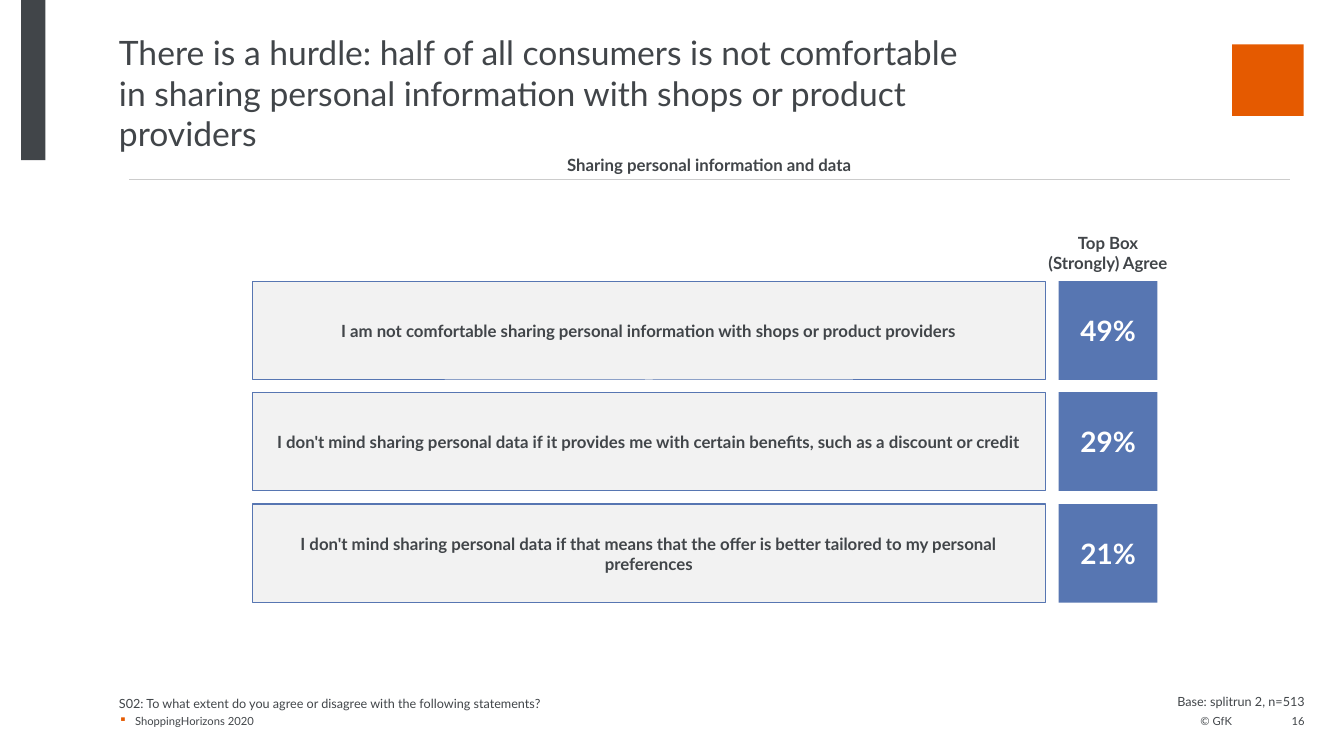
from lxml import etree
from pptx import Presentation
from pptx.dml.color import RGBColor
from pptx.enum.shapes import MSO_CONNECTOR as CONNECTOR, MSO_SHAPE as SHAPE
from pptx.enum.text import MSO_ANCHOR as ANCHOR, MSO_AUTO_SIZE as AUTO_SIZE, PP_ALIGN as ALIGN
from pptx.oxml.ns import qn
from pptx.util import Pt

PX = 9144  # 100 px to the inch
FONT = "Lato"
DARK, BLUE, ORANGE = "414549", "5776B2", "E55A00"
PALE, RULE, WHITE = "F2F2F2", "CCCCCC", "FFFFFF"

STATEMENTS = [
    ("I am not comfortable sharing personal information with shops or product providers", "49%"),
    ("I don't mind sharing personal data if it provides me with certain benefits, "
     "such as a discount or credit", "29%"),
    ("I don't mind sharing personal data if that means that the offer is better "
     "tailored to my personal preferences", "21%"),
]
ROWS_TOP, ROW_HEIGHT, ROWS_SPAN = 279, 98, 221


def px(*lengths):
    return [length * PX for length in lengths]


def rgb(color):
    return RGBColor.from_string(color)


def write(frame, text, size, color=DARK, bold=False, align=ALIGN.LEFT, anchor=ANCHOR.BOTTOM):
    frame.text = text
    frame.word_wrap = True
    frame.auto_size = AUTO_SIZE.NONE
    frame.vertical_anchor = anchor
    paragraph = frame.paragraphs[0]
    paragraph.alignment = align
    for run in paragraph.runs:
        run.font.name = FONT
        run.font.size = Pt(size)
        run.font.bold = bold
        run.font.color.rgb = rgb(color)


def remove_margins(frame):
    frame.margin_left = frame.margin_top = frame.margin_right = frame.margin_bottom = 0


def add_label(slide, box, text, size, **style):
    frame = slide.shapes.add_textbox(*px(*box)).text_frame
    remove_margins(frame)
    write(frame, text, size, **style)
    return frame


def add_box(slide, box, fill, line=None):
    rect = slide.shapes.add_shape(SHAPE.RECTANGLE, *px(*box))
    rect.shadow.inherit = False
    rect.fill.solid()
    rect.fill.fore_color.rgb = rgb(fill)
    if line:
        rect.line.color.rgb = rgb(line)
        rect.line.width = Pt(0.75)
    else:
        rect.line.fill.background()
    return rect


def add_bullet(paragraph, symbol, color, indent):
    properties = paragraph._p.get_or_add_pPr()
    properties.set("marL", str(indent * PX))
    properties.set("indent", str(-indent * PX))
    bullet_color = etree.SubElement(properties, qn("a:buClr"))
    etree.SubElement(bullet_color, qn("a:srgbClr"), val=color)
    etree.SubElement(properties, qn("a:buChar"), char=symbol)


def add_rule(slide, left, right, y):
    rule = slide.shapes.add_connector(CONNECTOR.STRAIGHT, *px(left, y, right, y))
    rule.line.color.rgb = rgb(RULE)
    rule.line.width = Pt(0.5)
    etree.SubElement(rule._element.spPr, qn("a:effectLst"))


def set_title(slide, box, text):
    title = slide.shapes.title
    title.left, title.top, title.width, title.height = px(*box)
    remove_margins(title.text_frame)
    write(title.text_frame, text, 24, anchor=ANCHOR.TOP)


def add_statement(slide, top, statement, share):
    for left, width, text, size, color, fill in (
        (250, 787, statement, 12, DARK, PALE),
        (1050, 98, share, 20, WHITE, BLUE),
    ):
        line = BLUE if fill == PALE else None
        box = add_box(slide, (left, top, width, ROW_HEIGHT), fill, line)
        write(box.text_frame, text, size, color, True, ALIGN.CENTER, ANCHOR.MIDDLE)


def add_footer(slide):
    add_label(slide, (118, 690, 893, 15),
              "S02: To what extent do you agree or disagree with the following statements?", 9)
    study = add_label(slide, (118, 707, 893, 15), "ShoppingHorizons 2020", 8)
    add_bullet(study.paragraphs[0], "▪", ORANGE, 16)
    add_label(slide, (1137, 687, 157, 16), "Base: splitrun 2, n=513", 9, align=ALIGN.RIGHT)
    add_label(slide, (1167, 707, 55, 15), "© GfK", 8, align=ALIGN.RIGHT)
    add_label(slide, (1223, 707, 71, 15), "16", 8, align=ALIGN.RIGHT)


def main():
    deck = Presentation()
    deck.slide_width, deck.slide_height = px(1333, 750)
    slide = deck.slides.add_slide(deck.slide_layouts[5])

    add_box(slide, (1222, 44, 71, 71), ORANGE)
    add_box(slide, (21, 0, 24, 159), DARK)
    set_title(slide, (118, 32, 865, 71),
              "There is a hurdle: half of all consumers is not comfortable in sharing "
              "personal information with shops or product providers")

    heading = dict(bold=True, align=ALIGN.CENTER, anchor=ANCHOR.MIDDLE)
    add_label(slide, (128, 147, 1151, 32), "Sharing personal information and data", 12, **heading)
    add_rule(slide, 128, 1279, 178)
    add_label(slide, (1031, 219, 136, 64), "Top Box\v(Strongly) Agree", 12, **heading)

    for row, (statement, share) in enumerate(STATEMENTS):
        top = ROWS_TOP + row * ROWS_SPAN // (len(STATEMENTS) - 1)
        add_statement(slide, top, statement, share)

    add_footer(slide)
    deck.save("out.pptx")


if __name__ == "__main__":
    main()
